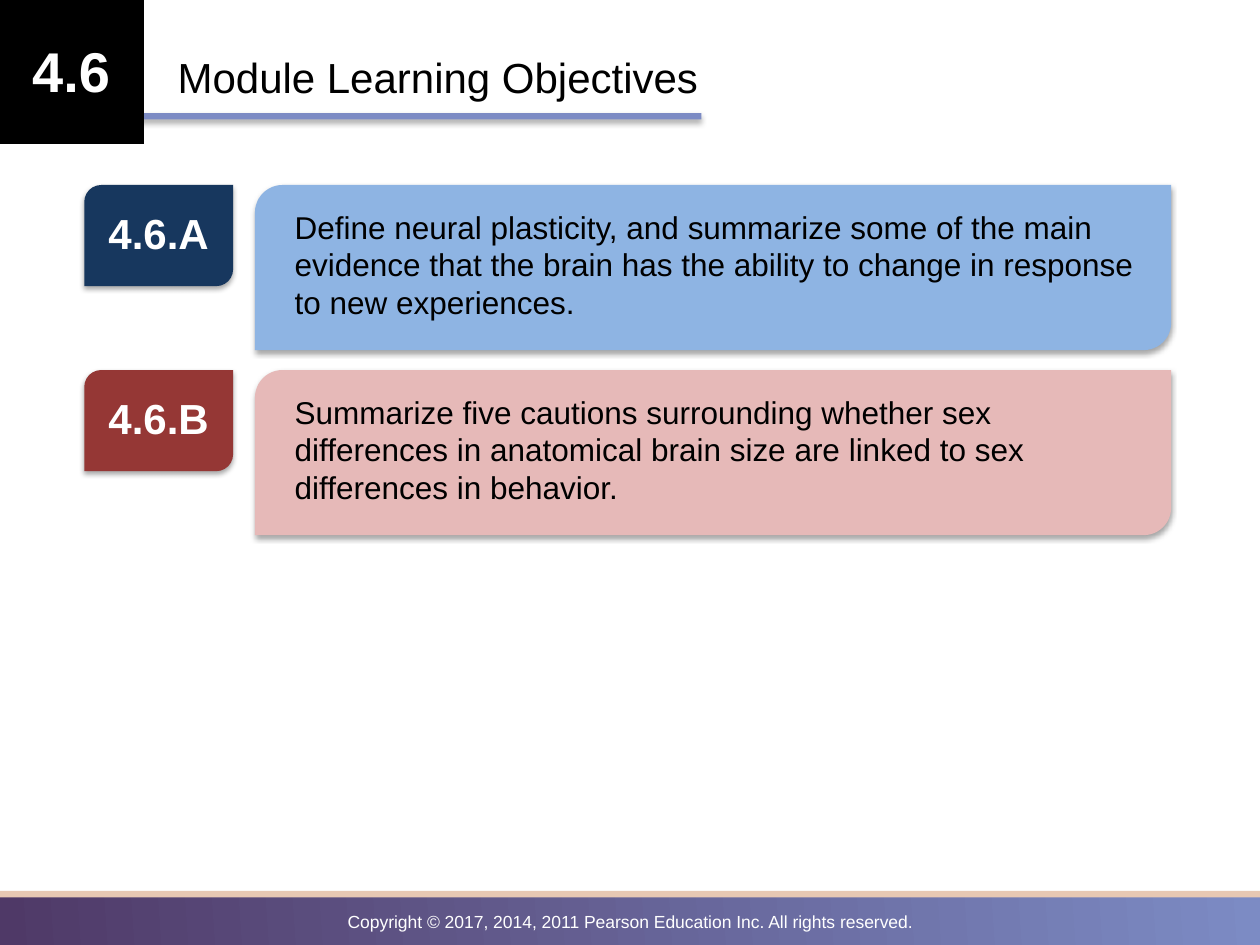
from lxml import etree
from pptx import Presentation
from pptx.dml.color import RGBColor
from pptx.enum import shapes, text
from pptx.oxml import parse_xml
from pptx.oxml.ns import nsdecls
from pptx.util import Cm, Pt

BLACK = RGBColor(0x00, 0x00, 0x00)
WHITE = RGBColor(0xFF, 0xFF, 0xFF)
PLUM = RGBColor(0x4F, 0x39, 0x67)
PERIWINKLE = RGBColor(0x7C, 0x8B, 0xC4)
SAND = RGBColor(0xE7, 0xC8, 0xB3)
NAVY = RGBColor(0x17, 0x37, 0x5E)
SKY = RGBColor(0x8E, 0xB4, 0xE3)
BRICK = RGBColor(0x95, 0x37, 0x35)
ROSE = RGBColor(0xE6, 0xB9, 0xB8)

RECTANGLE = shapes.MSO_SHAPE.RECTANGLE
LEAF = shapes.MSO_SHAPE.ROUND_2_DIAG_RECTANGLE
LEFT, CENTER = text.PP_ALIGN.LEFT, text.PP_ALIGN.CENTER

SLIDE_WIDTH, SLIDE_HEIGHT = 25.4, 19.05
FIRST_ROW_TOP, ROW_PITCH = 3.73, 3.73

OBJECTIVES = [
    ("4.6.A", NAVY, SKY,
     "Define neural plasticity, and summarize some of the main evidence that "
     "the brain has the ability to change in response to new experiences."),
    ("4.6.B", BRICK, ROSE,
     "Summarize five cautions surrounding whether sex differences in "
     "anatomical brain size are linked to sex differences in behavior."),
]

SHADOW_XML = (
    f'<a:effectLst {nsdecls("a")}>'
    '<a:outerShdw blurRad="40000" dist="23000" dir="5400000" rotWithShape="0">'
    '<a:srgbClr val="000000"><a:alpha val="35000"/></a:srgbClr>'
    '</a:outerShdw></a:effectLst>'
)


def add_block(parent, kind, box, color, shadow=False):
    """Add a borderless filled shape; box is left, top, width, height in cm."""
    shape = parent.shapes.add_shape(kind, *map(Cm, box))
    shape.fill.solid()
    shape.fill.fore_color.rgb = color
    shape.line.fill.background()
    if shadow:
        shape._element.spPr.append(parse_xml(SHADOW_XML))
    else:
        shape.shadow.inherit = False
    return shape


def add_text(parent, box, words, size, color, align=LEFT, bold=False):
    frame = parent.shapes.add_textbox(*map(Cm, box)).text_frame
    frame.word_wrap = True
    paragraph = frame.paragraphs[0]
    paragraph.alignment = align
    run = paragraph.add_run()
    run.text = words
    formats = {"name": "Arial", "size": Pt(size), "bold": bold}
    for attribute, value in formats.items():
        setattr(run.font, attribute, value)
    run.font.color.rgb = color


def add_footer(slide):
    band = add_block(slide, RECTANGLE, (0, 17.98, SLIDE_WIDTH, 1.07), PLUM)
    band.fill.gradient()
    band.fill.gradient_angle = 4
    for stop, color in zip(band.fill.gradient_stops, (PLUM, PERIWINKLE)):
        stop.color.rgb = color
    add_block(slide, RECTANGLE, (0, 17.96, SLIDE_WIDTH, 0.13), SAND)
    add_text(slide, (0, 18.24, SLIDE_WIDTH, 0.68),
             "Copyright © 2017, 2014, 2011 Pearson Education Inc. "
             "All rights reserved.", 10, WHITE, CENTER)


def add_header(slide):
    add_block(slide, RECTANGLE, (0, 2.28, 14.14, 0.13), PERIWINKLE, shadow=True)
    number = slide.shapes.add_group_shape()
    add_block(number, RECTANGLE, (0, 0, 2.9, 2.9), BLACK)
    add_text(number, (0, 0.62, 2.87, 1.62), "4.6", 32, WHITE, CENTER, True)
    add_text(slide, (3.33, 0.92, 19.58, 1.28),
             "Module Learning Objectives", 24, BLACK)


def add_objective(slide, top, label, badge_color, panel_color, words):
    text_top = top + 0.33
    badge = slide.shapes.add_group_shape()
    add_block(badge, LEAF, (1.7, top, 3, 2.04), badge_color, shadow=True)
    add_text(badge, (1.7, text_top, 3, 1.28), label, 24, WHITE, CENTER, True)
    panel = slide.shapes.add_group_shape()
    add_block(panel, LEAF, (5.14, top, 18.47, 3.33), panel_color, shadow=True)
    add_text(panel, (5.69, text_top, 17.75, 2.57), words, 18, BLACK)


def main():
    presentation = Presentation()
    presentation.slide_width = Cm(SLIDE_WIDTH)
    presentation.slide_height = Cm(SLIDE_HEIGHT)
    slide = presentation.slides.add_slide(presentation.slide_layouts[6])
    add_footer(slide)
    add_header(slide)
    for row, objective in enumerate(OBJECTIVES):
        add_objective(slide, FIRST_ROW_TOP + row * ROW_PITCH, *objective)
    presentation.save("out.pptx")


if __name__ == "__main__":
    main()
